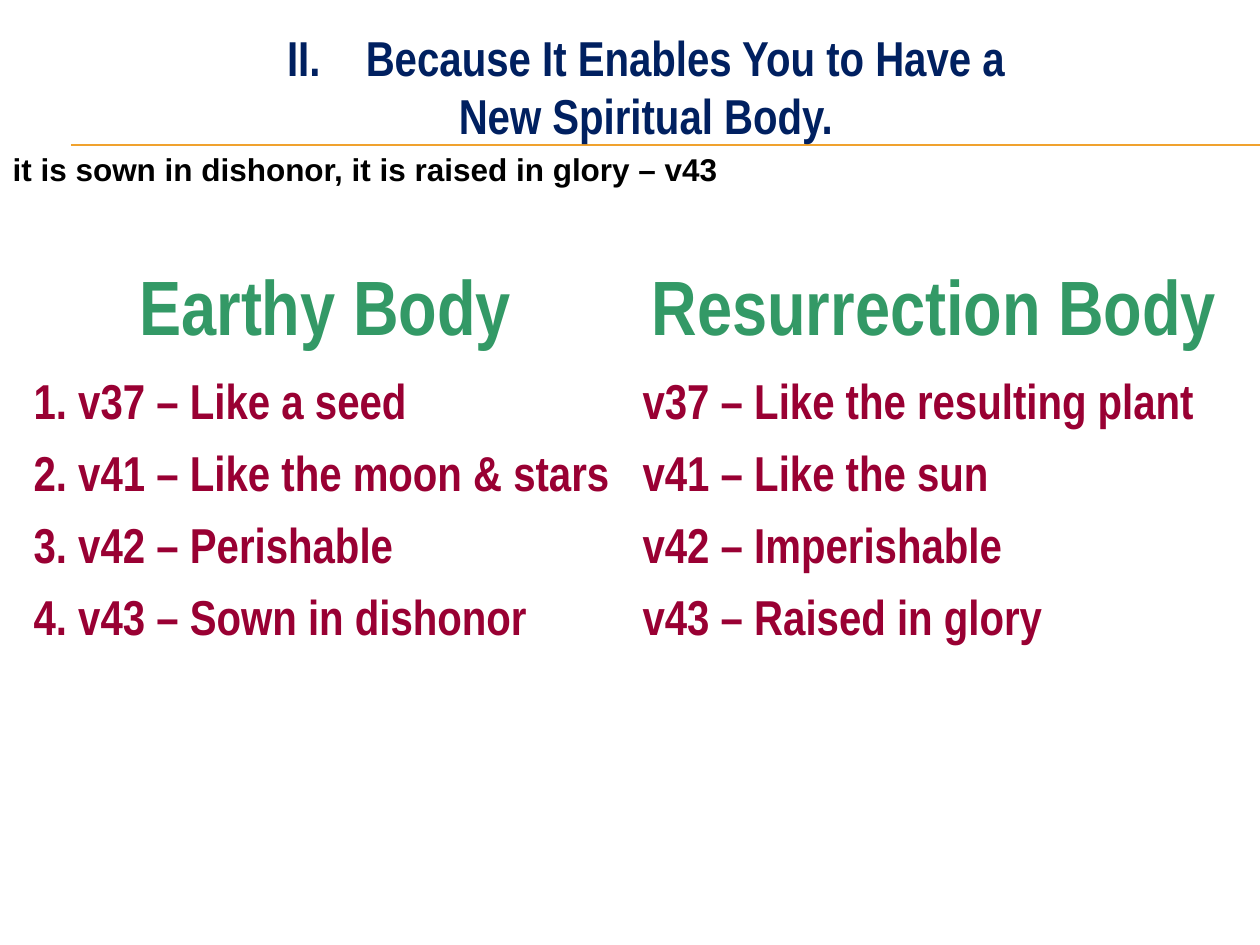
from lxml.etree import SubElement
from pptx import Presentation
from pptx.dml.color import RGBColor
from pptx.enum.shapes import MSO_CONNECTOR
from pptx.enum.text import MSO_AUTO_SIZE, PP_ALIGN as Align
from pptx.oxml.ns import qn
from pptx.util import Pt

TITLE = ["Because It Enables You to Have a", "New Spiritual Body."]
VERSE = "it is sown in dishonor, it is raised in glory – v43"
COMPARISON = [
    ("Earthy Body", "Resurrection Body"),
    ("1. v37 – Like a seed", "v37 – Like the resulting plant"),
    ("2. v41 – Like the moon & stars", "v41 – Like the sun"),
    ("3. v42 – Perishable", "v42 – Imperishable"),
    ("4. v43 – Sown in dishonor", "v43 – Raised in glory"),
]
NARROW = "Arial Narrow"
NAVY, GOLD, GREEN, CRIMSON, BLACK = "002060", "F0A22E", "339966", "990033", "000000"
WIDTH, HEIGHT = 720, 540
RULE_LEFT, RULE_TOPS = 40.5, (82.8, 83.5)
INDENT = 45


def style(paragraph, size, color, align, face=NARROW):
    paragraph.alignment = align
    font = paragraph.font
    font.name, font.size, font.bold = face, Pt(size), True
    font.color.rgb = RGBColor.from_string(color)


def add_plain_table(slide, left, top, width, row_heights, columns):
    """Add a table with equal columns, no fills and no banding."""
    table = slide.shapes.add_table(len(row_heights), columns, Pt(left), Pt(top),
                                   Pt(width), Pt(sum(row_heights))).table
    table.first_row = table.horz_banding = False
    for column in table.columns:
        column.width = Pt(width / columns)
    for row, height in zip(table.rows, row_heights):
        row.height = Pt(height)
    for cell in table.iter_cells():
        cell.fill.background()
    return table


prs = Presentation()
prs.slide_width, prs.slide_height = Pt(WIDTH), Pt(HEIGHT)
slide = prs.slides.add_slide(prs.slide_layouts[6])

for top in RULE_TOPS:
    rule = slide.shapes.add_connector(MSO_CONNECTOR.STRAIGHT, Pt(RULE_LEFT), Pt(top),
                                      Pt(WIDTH), Pt(top))
    rule.line.color.rgb = RGBColor.from_string(GOLD)
    rule.line.width = Pt(0.75)
    SubElement(rule._element.spPr, qn("a:effectLst"))

comparison = add_plain_table(slide, 12, 156, 696, [60] + [41] * 4, 2)
for r, row in enumerate(COMPARISON):
    look = (28, CRIMSON, Align.LEFT) if r else (44, GREEN, Align.CENTER)
    for c, text in enumerate(row):
        cell = comparison.cell(r, c)
        cell.text = text
        style(cell.text_frame.paragraphs[0], *look)

title = slide.shapes.add_textbox(Pt(60), Pt(12), Pt(618), Pt(75)).text_frame
title.word_wrap = True
title.auto_size = MSO_AUTO_SIZE.SHAPE_TO_FIT_TEXT
title.text = "\n".join(TITLE)
for number, paragraph in enumerate(title.paragraphs):
    properties = paragraph._p.get_or_add_pPr()
    properties.set("marL", str(Pt(INDENT)))
    properties.set("indent", str(-Pt(INDENT)))
    if number == 0:
        SubElement(properties, qn("a:buAutoNum"), type="romanUcPeriod", startAt="2")
    else:
        SubElement(properties, qn("a:buNone"))
    style(paragraph, 28, NAVY, Align.CENTER)

verse = add_plain_table(slide, 0, 84, WIDTH, [29.5], 1).cell(0, 0)
verse.text = VERSE
style(verse.text_frame.paragraphs[0], 18, BLACK, Align.JUSTIFY, "Arial")

prs.save("out.pptx")
